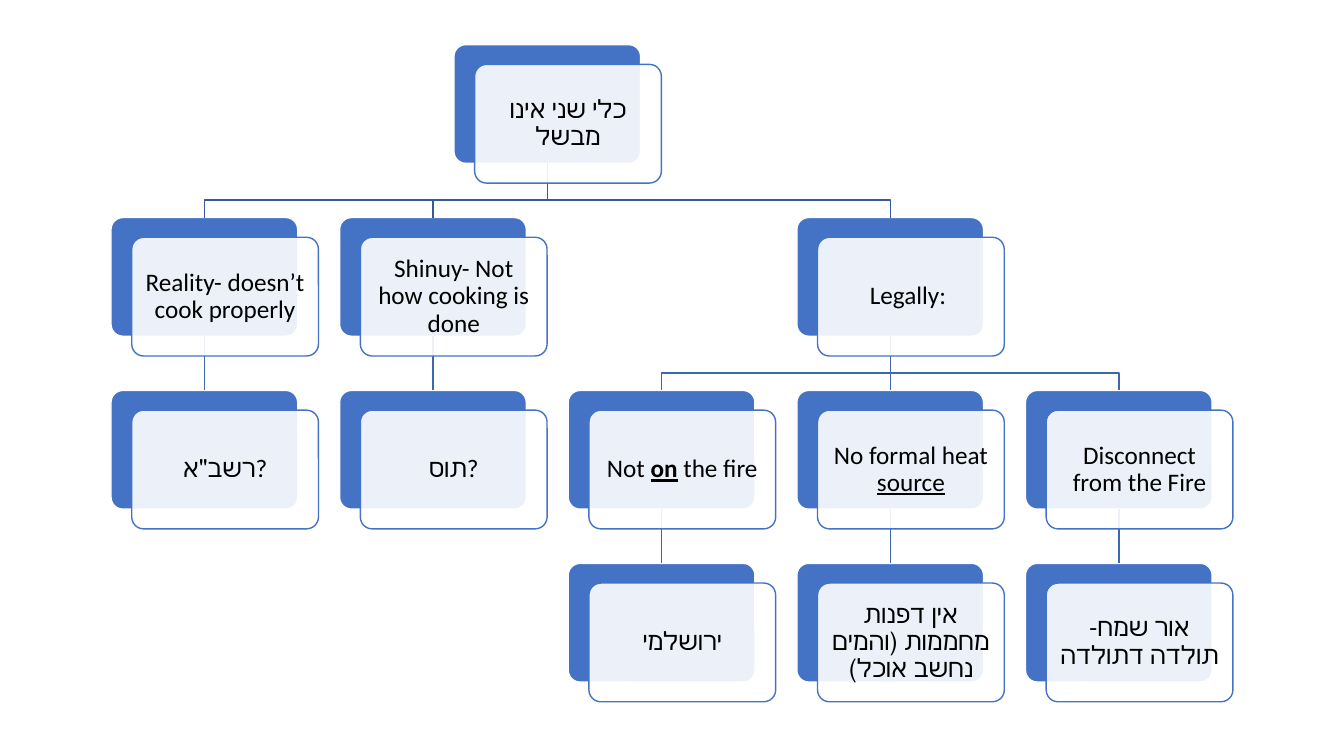
import pptx
import pptx.util
import pptx.dml.color
import pptx.enum.shapes
import pptx.enum.text
import pptx.oxml.ns
import lxml.etree

Pt = pptx.util.Pt
RGBColor = pptx.dml.color.RGBColor
MSO_SHAPE = pptx.enum.shapes.MSO_SHAPE

BLUE = RGBColor(0x44, 0x72, 0xC4)
WHITE = RGBColor(0xFF, 0xFF, 0xFF)
BLACK = RGBColor(0x00, 0x00, 0x00)
ROOT_LINE = RGBColor(0x36, 0x5B, 0x9D)
BRANCH_LINE = RGBColor(0x3E, 0x67, 0xB2)

# Grid of cards, in points
LEFT, TOP = 79.3, 31.9
COL_STEP, ROW_STEP = 163.3, 123.5
CARD_W, CARD_H = 133.4, 84.8
SHIFT_X, SHIFT_Y = 14.8, 14.1
BEND = 26.3

# name: (column, row, parent, runs as (text, bold, underline))
NODES = {
    "root": (1.5, 0, None, [("כלי שני אינו מבשל", False, False)]),
    "reality": (0, 1, "root", [("Reality- doesn’t cook properly", False, False)]),
    "rashba": (0, 2, "reality", [("רשב\"א?", False, False)]),
    "shinuy": (1, 1, "root", [("Shinuy- Not how cooking is done", False, False)]),
    "tos": (1, 2, "shinuy", [("תוס?", False, False)]),
    "legally": (3, 1, "root", [("Legally: ", False, False)]),
    "not_on": (2, 2, "legally", [("Not ", False, False), ("on", True, True),
                                 (" the fire", False, False)]),
    "yerushalmi": (2, 3, "not_on", [("ירושלמי", False, False)]),
    "no_source": (3, 2, "legally", [("No formal heat ", False, False),
                                    ("source", False, True)]),
    "walls": (3, 3, "no_source", [("אין דפנות מחממות (והמים נחשב אוכל)", False, False)]),
    "disconnect": (4, 2, "legally", [("Disconnect from the Fire", False, False)]),
    "or_sameach": (4, 3, "disconnect", [("אור שמח- תולדה דתולדה", False, False)]),
}

prs = pptx.Presentation()
prs.slide_width, prs.slide_height = Pt(960), Pt(540)
s = prs.slides.add_slide(prs.slide_layouts[6])


def add_card(col, row, dx, dy, fill, line):
    sp = s.shapes.add_shape(
        MSO_SHAPE.ROUNDED_RECTANGLE,
        Pt(LEFT + col * COL_STEP + dx), Pt(TOP + row * ROW_STEP + dy),
        Pt(CARD_W), Pt(CARD_H))
    sp.adjustments[0] = 0.1
    sp.shadow.inherit = False
    sp.fill.solid()
    sp.fill.fore_color.rgb = fill
    sp.line.color.rgb = line
    sp.line.width = Pt(1)
    return sp


# Blue back cards
backs = {name: add_card(col, row, 0, 0, BLUE, WHITE)
         for name, (col, row, parent, runs) in NODES.items()}

# Links from parent to child, under the front cards
for name, (col, row, parent, runs) in NODES.items():
    if parent is None:
        continue
    parent_col, parent_row = NODES[parent][:2]
    if col == parent_col:
        link = s.shapes.add_connector(pptx.enum.shapes.MSO_CONNECTOR.STRAIGHT, 0, 0, 0, 0)
        link.begin_connect(backs[parent], 2)
        link.end_connect(backs[name], 0)
        lxml.etree.SubElement(link.line._get_or_add_ln().getparent(),
                              pptx.oxml.ns.qn("a:effectLst"))
    else:
        x0 = LEFT + parent_col * COL_STEP + CARD_W / 2
        x1 = LEFT + col * COL_STEP + CARD_W / 2
        y0 = TOP + parent_row * ROW_STEP + CARD_H
        y1 = TOP + row * ROW_STEP
        fb = s.shapes.build_freeform(Pt(x0), Pt(y0))
        fb.add_line_segments([(Pt(x0), Pt(y0 + BEND)), (Pt(x1), Pt(y0 + BEND)),
                              (Pt(x1), Pt(y1))], close=False)
        link = fb.convert_to_shape()
        link.fill.background()
        link.shadow.inherit = False
    link.line.color.rgb = ROOT_LINE if parent == "root" else BRANCH_LINE
    link.line.width = Pt(1)

# Translucent front cards with the text
for col, row, parent, runs in NODES.values():
    sp = add_card(col, row, SHIFT_X, SHIFT_Y, WHITE, BLUE)
    color = sp.fill._xPr.find(".//" + pptx.oxml.ns.qn("a:srgbClr"))
    lxml.etree.SubElement(color, pptx.oxml.ns.qn("a:alpha"), val="90000")
    tf = sp.text_frame
    tf.word_wrap = True
    tf.vertical_anchor = pptx.enum.text.MSO_ANCHOR.MIDDLE
    tf.margin_left = tf.margin_right = tf.margin_top = tf.margin_bottom = Pt(5)
    p = tf.paragraphs[0]
    p.alignment = pptx.enum.text.PP_ALIGN.CENTER
    p.line_spacing = 0.9
    p.font.name = "Calibri"
    p.font.size = Pt(18)
    p.font.color.rgb = BLACK
    for text, bold, underline in runs:
        r = p.add_run()
        r.text = text
        if bold:
            r.font.bold = True
        if underline:
            r.font.underline = True

prs.save("out.pptx")
